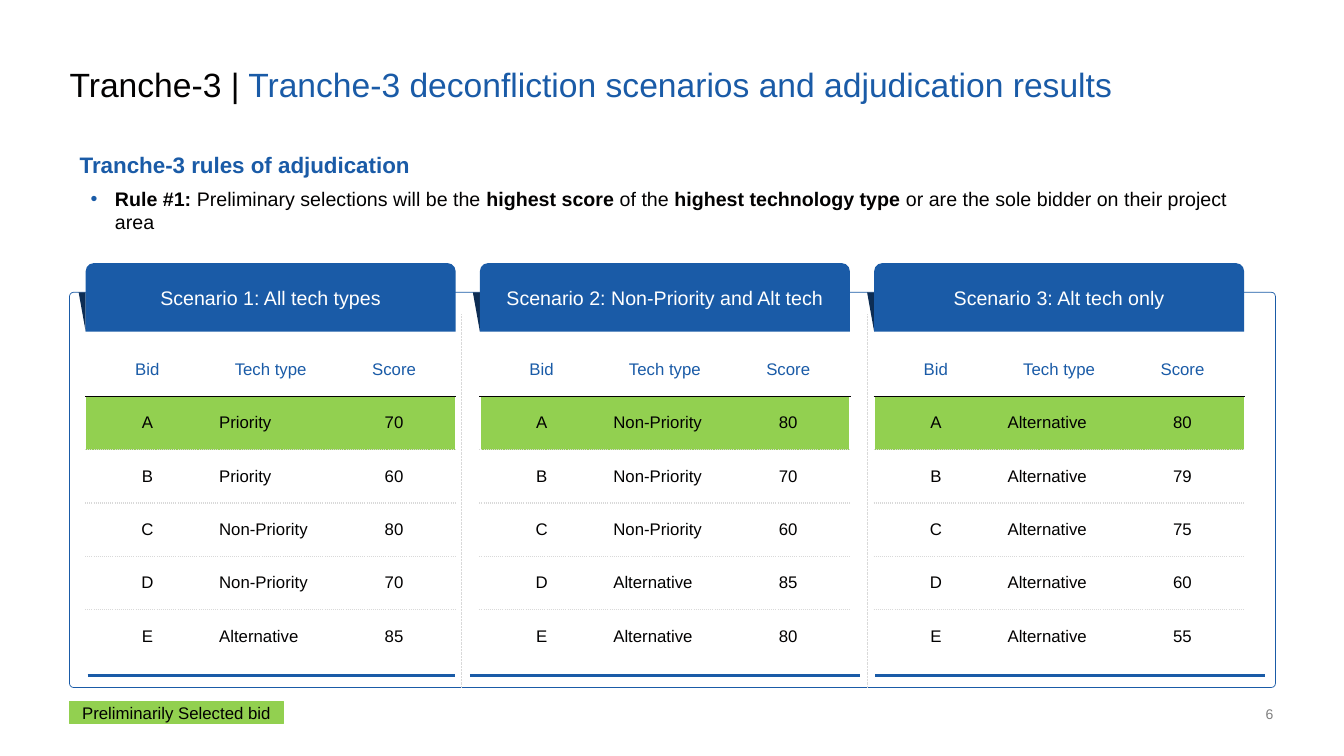
from lxml import etree
from pptx import Presentation
from pptx import util as u
from pptx.dml.color import RGBColor
from pptx.enum import dml, shapes, text
from pptx.oxml import ns

PX = 9144
COLORS = {"ink": "020101", "blue": "1A5BA7", "navy": "0D2D54", "green": "92D050",
          "dots": "D9D9D9", "gray": "808080", "white": "FFFFFF"}
LEFT, WIDTH = 69, 1196
CARD_LEFT, CARD_WIDTH, CARD_PITCH = 85, 367, 391
ROW_HEIGHT = 53
HEADINGS = ["Bid", "Tech type", "Score"]
SCENARIOS = [
    ("Scenario 1: All tech types",
     [("Priority", 70), ("Priority", 60), ("Non-Priority", 80),
      ("Non-Priority", 70), ("Alternative", 85)]),
    ("Scenario 2: Non-Priority and Alt tech",
     [("Non-Priority", 80), ("Non-Priority", 70), ("Non-Priority", 60),
      ("Alternative", 85), ("Alternative", 80)]),
    ("Scenario 3: Alt tech only",
     [("Alternative", 80), ("Alternative", 79), ("Alternative", 75),
      ("Alternative", 60), ("Alternative", 55)]),
]
FOOT_RULES = [(87, 451), (466, 853), (868, 1255)]
DIVIDERS = [458, 860]
CENTER, RIGHT = text.PP_ALIGN.CENTER, text.PP_ALIGN.RIGHT
MIDDLE = text.MSO_ANCHOR.MIDDLE


def color(name):
    """Return the named colour."""
    return RGBColor.from_string(COLORS[name])


def apply(target, values):
    """Set each attribute in values on the target."""
    for name, value in values.items():
        setattr(target, name, value)


def add_element(parent, tag, **attributes):
    """Append a drawing element to the parent."""
    return etree.SubElement(parent, ns.qn(tag), attributes)


def write(paragraph, runs, size, **values):
    """Fill a paragraph with (text, colour, bold) runs."""
    apply(paragraph, values)
    for words, color_name, bold in runs:
        run = paragraph.add_run()
        run.text = words
        apply(run.font, {"name": "Arial", "size": u.Pt(size), "bold": bold})
        run.font.color.rgb = color(color_name)


def set_frame(frame, margin, anchor):
    """Wrap the frame and set its margins and anchor."""
    sides = ("left", "top", "right", "bottom")
    apply(frame, {f"margin_{side}": margin * PX for side in sides})
    apply(frame, {"word_wrap": True, "vertical_anchor": anchor})
    return frame


def add_text(slide, box, anchor=text.MSO_ANCHOR.TOP):
    """Add a text box without margins and return its frame."""
    frame = slide.shapes.add_textbox(*(n * PX for n in box)).text_frame
    return set_frame(frame, 0, anchor)


def add_shape(slide, kind, box, fill=None, line=None, line_width=1, adjustments=()):
    """Add a preset shape with its fill, outline and adjustments."""
    shape = slide.shapes.add_shape(kind, *(n * PX for n in box))
    shape.shadow.inherit = False
    for index, value in enumerate(adjustments):
        shape.adjustments[index] = value
    for part, name in ((shape.fill, fill), (shape.line.fill, line)):
        if name:
            part.solid()
            part.fore_color.rgb = color(name)
        else:
            part.background()
    if line:
        shape.line.width = u.Pt(line_width)
    return shape


def add_line(slide, start, end, color_name, width, dash=None):
    """Add a straight line between two points."""
    points = [n * PX for n in (*start, *end)]
    connector = slide.shapes.add_connector(shapes.MSO_CONNECTOR.STRAIGHT, *points)
    add_element(connector.element.spPr, "a:effectLst")
    connector.line.color.rgb = color(color_name)
    apply(connector.line, {"width": u.Pt(width), "dash_style": dash})


def add_border(cell, side, color_name):
    """Draw one side of a cell, or hide it when no colour is given."""
    line = add_element(cell._tc.get_or_add_tcPr(), f"a:ln{side}", w="12700")
    if not color_name:
        add_element(line, "a:noFill")
        return
    fill = add_element(line, "a:solidFill")
    add_element(fill, "a:srgbClr", val=COLORS[color_name])
    add_element(line, "a:prstDash", val="sysDot" if color_name == "dots" else "solid")


def add_bid_table(slide, left, bids):
    """Add the table of bids with the selected bid highlighted."""
    rows = [HEADINGS] + [(letter, *bid) for letter, bid in zip("ABCDE", bids)]
    box = (left, 340, CARD_WIDTH, ROW_HEIGHT * len(rows))
    table = slide.shapes.add_table(len(rows), len(HEADINGS), *(n * PX for n in box)).table
    apply(table, {"first_row": False, "horz_banding": False})
    edges = ["white", "ink"] + ["dots"] * (len(rows) - 2) + ["white"]
    last = len(HEADINGS) - 1
    for r, row in enumerate(rows):
        table.rows[r].height = ROW_HEIGHT * PX
        for c, value in enumerate(row):
            cell = table.cell(r, c)
            add_border(cell, "L", "white" if c == 0 else None)
            add_border(cell, "R", "white" if c == last else None)
            add_border(cell, "T", edges[r])
            add_border(cell, "B", edges[r + 1])
            if r == 1:
                cell.fill.solid()
                cell.fill.fore_color.rgb = color("green")
            else:
                cell.fill.background()
            cell.vertical_anchor = MIDDLE
            write(cell.text_frame.paragraphs[0],
                  [(str(value), "ink" if r else "blue", False)], 12,
                  alignment=None if r and c == 1 else CENTER)


def add_scenario(slide, index, title, bids):
    """Add the banner, fold, table and foot rule of one scenario."""
    left = CARD_LEFT + index * CARD_PITCH
    fold = add_shape(slide, shapes.MSO_SHAPE.ISOSCELES_TRIANGLE,
                     (left - 7, 290, 7, 39), "navy", adjustments=(0,))
    fold.rotation = 180
    banner = add_shape(slide, shapes.MSO_SHAPE.ROUND_2_SAME_RECTANGLE,
                       (left, 261, CARD_WIDTH, 68), "blue", adjustments=(0.12, 0))
    frame = set_frame(banner.text_frame, 5, MIDDLE)
    write(frame.paragraphs[0], [(title, "white", False)], 14,
          alignment=CENTER, line_spacing=0.95)
    start, end = FOOT_RULES[index]
    add_line(slide, (start, 670), (end, 670), "blue", 2.25)
    add_bid_table(slide, left, bids)


def add_rules(slide):
    """Add the heading and the bulleted rule of adjudication."""
    frame = add_text(slide, (LEFT + 10, 150, WIDTH - 20, 69))
    write(frame.paragraphs[0], [("Tranche-3 rules of adjudication", "blue", True)], 16,
          space_after=u.Pt(6))
    rule = frame.add_paragraph()
    properties = rule._p.get_or_add_pPr()
    properties.set("marL", str(35 * PX))
    properties.set("indent", str(-24 * PX))
    bullet_color = add_element(properties, "a:buClr")
    add_element(bullet_color, "a:srgbClr", val=COLORS["blue"])
    add_element(properties, "a:buFont", typeface="Arial")
    add_element(properties, "a:buChar", char="•")
    parts = ["Rule #1: ", "Preliminary selections will be the ", "highest score ", "of the ",
             "highest technology type ", "or are the sole bidder on their project area"]
    write(rule, [(part, "ink", i % 2 == 0) for i, part in enumerate(parts)], 14,
          level=1, space_after=u.Pt(3))


def main():
    """Build the slide and save it."""
    presentation = Presentation()
    apply(presentation, {"slide_width": 1333 * PX, "slide_height": 750 * PX})
    slide = presentation.slides.add_slide(presentation.slide_layouts[6])

    add_shape(slide, shapes.MSO_SHAPE.ROUNDED_RECTANGLE, (LEFT, 290, WIDTH, 392),
              line="blue", line_width=0.5, adjustments=(0.01,))
    title = add_text(slide, (LEFT, 68, WIDTH, 36))
    write(title.paragraphs[0],
          [("Tranche-3 |", "ink", False),
           (" Tranche-3 deconfliction scenarios and adjudication results", "blue", False)],
          24, line_spacing=0.9)
    add_rules(slide)

    for x in DIVIDERS:
        add_line(slide, (x, 312), (x, 682), "dots", 0.5, dml.MSO_LINE.ROUND_DOT)
    for index, (name, bids) in enumerate(SCENARIOS):
        add_scenario(slide, index, name, bids)

    legend = add_shape(slide, shapes.MSO_SHAPE.RECTANGLE, (LEFT, 696, 212, 22),
                       "green", "green", 0.75)
    frame = set_frame(legend.text_frame, 0, MIDDLE)
    write(frame.paragraphs[0], [("Preliminarily Selected bid", "ink", False)], 12,
          alignment=CENTER)
    number = add_text(slide, (1221, 700, 42, 17), text.MSO_ANCHOR.BOTTOM)
    write(number.paragraphs[0], [("6", "gray", False)], 10, alignment=RIGHT)
    presentation.save("out.pptx")


if __name__ == "__main__":
    main()
